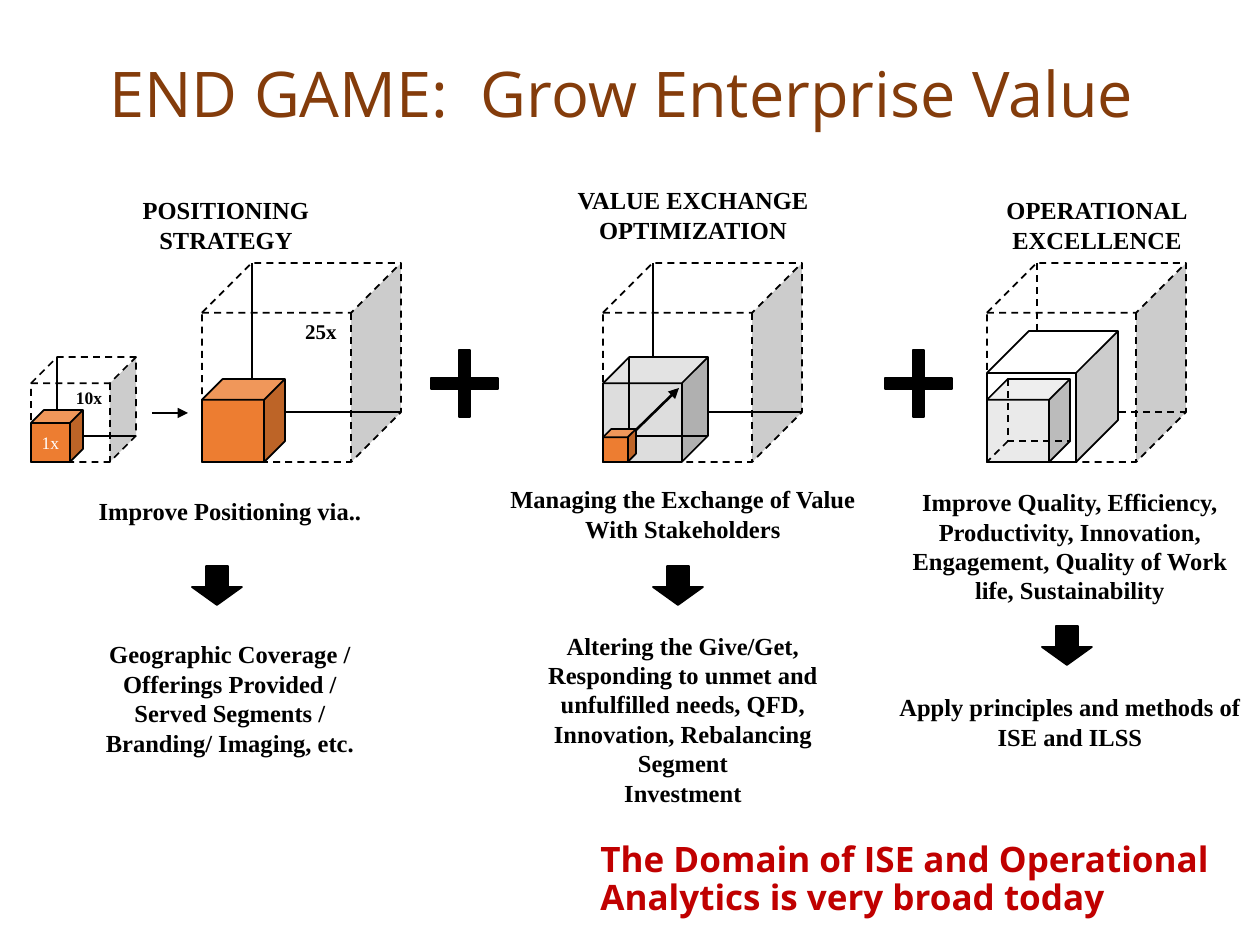
from lxml import etree
from pptx import Presentation
from pptx import util as u
from pptx.dml.color import RGBColor
from pptx.enum import dml, shapes, text
from pptx.oxml.ns import qn

PX = 914400 / 126
FLOOR = 462
SERIF, SANS = "Times New Roman", "Open Sans"
BLACK, WHITE, ORANGE = "000000", "FFFFFF", "ED7D31"


def px(*lengths):
    return [u.Emu(round(length * PX)) for length in lengths]


def color(code):
    return RGBColor.from_string(code)


def assign(target, values):
    for name, value in values.items():
        setattr(target, name, value)


class Painter:
    """Draws styled elements on the current slide."""

    heading = {"name": SERIF, "size": u.Pt(14), "bold": True}
    centered = {"alignment": text.PP_ALIGN.CENTER}
    tight = {"line_spacing": 0.9, "alignment": text.PP_ALIGN.LEFT}

    def __init__(self, deck):
        self.slide = deck.slides.add_slide(deck.slide_layouts[6])
        self.shapes = self.slide.shapes

    def stroke(self, line, width=1, dashed=False):
        line.color.rgb = color(BLACK)
        line.width = u.Pt(width)
        if dashed:
            line.dash_style = dml.MSO_LINE.DASH

    def fill_text(self, frame, lines, font, ink=BLACK, layout=None, gaps=None):
        for index, line in enumerate(lines):
            para = frame.paragraphs[0] if index == 0 else frame.add_paragraph()
            assign(para, layout or self.centered)
            if gaps and index in gaps:
                para.space_before = u.Pt(gaps[index])
            span = para.add_run()
            span.text = line
            assign(span.font, font)
            span.font.color.rgb = color(ink)

    def label(self, place, lines, font=None, wrap=False, gaps=None):
        box = self.shapes.add_textbox(*px(*place))
        box.text_frame.word_wrap = wrap
        self.fill_text(box.text_frame, lines, font or self.heading, gaps=gaps)

    def banner(self, place, line, font, ink):
        box = self.shapes.add_textbox(*px(*place))
        assign(box.text_frame, {"word_wrap": True, "vertical_anchor": text.MSO_ANCHOR.MIDDLE})
        self.fill_text(box.text_frame, [line], font, ink, self.tight)

    def preset(self, kind, place, fill, adjustments, dashed=False):
        shape = self.shapes.add_shape(kind, *px(*place))
        shape.shadow.inherit = False
        shape.fill.solid()
        shape.fill.fore_color.rgb = color(fill)
        self.stroke(shape.line, dashed=dashed)
        for index, value in enumerate(adjustments):
            shape.adjustments[index] = value
        return shape

    def cube(self, left, side, fill=WHITE, dashed=False, depth=0.25):
        place = (left, FLOOR - side, side, side)
        return self.preset(shapes.MSO_SHAPE.CUBE, place, fill, [depth], dashed)

    def back_edges(self, left, side, dashed=False):
        inset = round(side / 4)
        corner = (left + inset, FLOOR - inset)
        builder = self.shapes.build_freeform(corner[0], FLOOR - side, scale=PX)
        builder.add_line_segments([corner, (left + side, corner[1])], close=False)
        edges = builder.convert_to_shape()
        edges.shadow.inherit = False
        edges.fill.background()
        self.stroke(edges.line, dashed=dashed)

    def line(self, ends, width=1, dashed=False, arrow=False):
        connector = self.shapes.add_connector(shapes.MSO_CONNECTOR.STRAIGHT, *px(*ends))
        self.stroke(connector.line, width, dashed)
        properties = connector._element.spPr
        if arrow:
            etree.SubElement(properties.find(qn("a:ln")), qn("a:tailEnd"), type="triangle")
        etree.SubElement(properties, qn("a:effectLst"))


def main():
    deck = Presentation()
    deck.slide_width, deck.slide_height = px(1260, 945)
    page = Painter(deck)

    page.banner((97, 6, 1086, 183), "END GAME:  Grow Enterprise Value",
                {"name": SANS, "size": u.Pt(36)}, "843C0B")

    headings = [
        ((63, 189, 326, 72), ["POSITIONING", "STRATEGY"]),
        ((564, 179, 258, 72), ["VALUE EXCHANGE", "OPTIMIZATION"]),
        ((993, 189, 208, 72), ["OPERATIONAL", "EXCELLENCE"]),
    ]
    for place, lines in headings:
        page.label(place, lines)

    columns = [
        ((82, 490, 296, 276), {1: 65}, [
            "Improve Positioning via..",
            "Geographic Coverage / Offerings Provided / Served Segments / Branding/ Imaging, etc."]),
        ((494, 478, 378, 339), {2: 50}, [
            "Managing the Exchange of Value", "With Stakeholders", "Altering the Give/Get,",
            "Responding to unmet and unfulfilled needs, QFD, Innovation, Rebalancing Segment",
            "Investment"]),
        ((886, 481, 368, 280), {2: 50}, [
            "Improve Quality, Efficiency,",
            "Productivity, Innovation, Engagement, Quality of Work life, Sustainability",
            "Apply principles and methods of ISE and ILSS"]),
    ]
    for place, gaps, lines in columns:
        page.label(place, lines, wrap=True, gaps=gaps)

    for left, top in [(192, 566), (653, 566), (1042, 626)]:
        page.preset(shapes.MSO_SHAPE.DOWN_ARROW, (left, top, 50, 39), BLACK, [0.44, 0.46])
    for left in (431, 885):
        page.preset(shapes.MSO_SHAPE.CROSS, (left, 350, 67, 67), BLACK, [0.42])

    for left, side in [(31, 105), (202, 199), (603, 199)]:
        page.cube(left, side, dashed=True)
        page.back_edges(left, side)

    unit = page.cube(31, 52, ORANGE)
    assign(unit.text_frame, {"word_wrap": False, "vertical_anchor": text.MSO_ANCHOR.MIDDLE})
    page.fill_text(unit.text_frame, ["1x"], {"name": SERIF, "size": u.Pt(10)}, WHITE)
    page.line((152, 413, 188, 413), arrow=True)
    page.cube(202, 83, ORANGE)

    page.cube(603, 105, "DDDDDD")
    page.line((634, 432, 679, 388), width=1.5, arrow=True)
    page.back_edges(603, 105)
    page.cube(603, 33, ORANGE)

    page.cube(987, 199, dashed=True)
    page.back_edges(987, 199, dashed=True)
    page.cube(987, 131, depth=0.32)
    page.cube(987, 83, "EAEAEA")
    page.back_edges(987, 83, dashed=True)
    page.line((1008, 441, 987, FLOOR), dashed=True)

    for place, line, size in [((62, 381, 54, 34), "10x", 10), ((291, 312, 60, 38), "25x", 12)]:
        page.label(place, [line], {**page.heading, "size": u.Pt(size)})

    page.banner((588, 824, 635, 113),
                "The Domain of ISE and Operational Analytics is very broad today",
                {"name": SANS, "size": u.Pt(20), "bold": True}, "C00000")
    deck.save("out.pptx")


if __name__ == "__main__":
    main()
